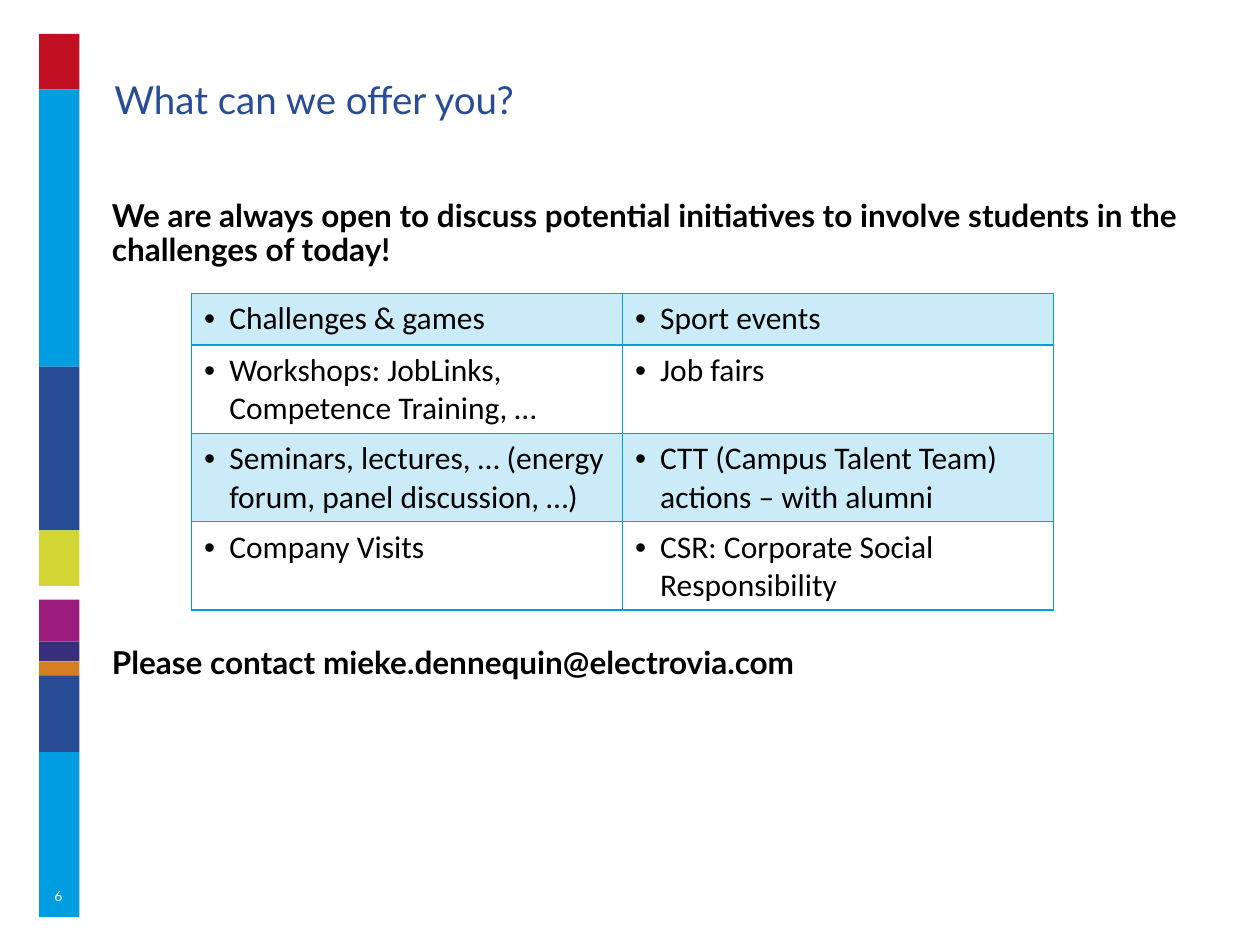
from lxml import etree
from pptx import Presentation, util as u
from pptx.dml.color import RGBColor
from pptx.enum import shapes, text
from pptx.oxml import ns

UNIT = u.Inches(0.1)
COLUMNS, ROWS = 100, 75

COLORS = {
    "sky": "009DE0", "red": "C01022", "navy": "284C96", "lime": "D2D534",
    "magenta": "9C1C7E", "violet": "382E7C", "orange": "D57E21",
    "black": "000000", "white": "FFFFFF",
}

STRIPE_LEFT, STRIPE_TOP, STRIPE_WIDTH = 3.1, 2.7, 3.2
STRIPE = [
    ("red", 4.4), ("sky", 22), ("navy", 13), ("lime", 4.4), (None, 1.1),
    ("magenta", 3.3), ("violet", 1.6), ("orange", 1.1), ("navy", 6.1), ("sky", 13.1),
]

HEADING = {"size": u.Pt(22), "name": "Lato", "bold": False, "color": "navy"}
STATEMENT = {"size": u.Pt(18), "name": "Lato", "bold": True, "color": "black"}
NUMBER = {"size": u.Pt(8), "name": "Lato", "bold": False, "color": "white"}
OFFER = {"size": u.Pt(18), "name": "Calibri", "bold": False, "color": "black"}

LEFT = {"alignment": text.PP_ALIGN.LEFT, "line_spacing": 0.9}
CENTER = {"alignment": text.PP_ALIGN.CENTER}
TOP, MIDDLE = text.MSO_ANCHOR.TOP, text.MSO_ANCHOR.MIDDLE

TEXTS = [
    ("What can we offer you?", (8.1, 6, 89.3, 8.7), HEADING, LEFT, TOP),
    ("We are always open to discuss potential initiatives to involve students "
     "in the challenges of today!", (7.9, 15.4, 89.3, 7), STATEMENT, LEFT, TOP),
    ("Please contact mieke.dennequin@electrovia.com",
     (7.9, 50.9, 89.3, 4), STATEMENT, LEFT, TOP),
    ("6", (2, 69.1, 5.3, 4), NUMBER, CENTER, MIDDLE),
]

OFFERS = [
    ("Challenges & games", "Sport events"),
    ("Workshops: JobLinks, Competence Training, …", "Job fairs"),
    ("Seminars, lectures, … (energy forum, panel discussion, …)",
     "CTT (Campus Talent Team) actions – with alumni"),
    ("Company Visits", "CSR: Corporate Social Responsibility"),
]
OFFER_LEFT, OFFER_TOP, OFFER_COLUMN = 15.2, 23.3, 34.2
OFFER_ROWS = [4.1, 7, 7, 7]
BORDER = u.Pt(1)
INDENT = u.Inches(0.2)
TINT = 20


def grid(*lengths):
    return [round(length * UNIT) for length in lengths]


def rgb(color):
    return RGBColor.from_string(COLORS[color])


def style(paragraph, font_format, paragraph_format):
    for key, value in paragraph_format.items():
        setattr(paragraph, key, value)
    for key, value in font_format.items():
        if key == "color":
            paragraph.font.color.rgb = rgb(value)
        else:
            setattr(paragraph.font, key, value)


def add_stripe(slide):
    top = STRIPE_TOP
    for color, height in STRIPE:
        if color:
            band = slide.shapes.add_shape(
                shapes.MSO_SHAPE.RECTANGLE, *grid(STRIPE_LEFT, top, STRIPE_WIDTH, height))
            band.shadow.inherit = False
            band.fill.solid()
            band.fill.fore_color.rgb = rgb(color)
            band.line.fill.background()
        top += height


def add_text(slide, words, place, font_format, paragraph_format, anchor):
    frame = slide.shapes.add_textbox(*grid(*place)).text_frame
    frame.word_wrap = True
    frame.vertical_anchor = anchor
    paragraph = frame.paragraphs[0]
    paragraph.text = words
    style(paragraph, font_format, paragraph_format)


def add_bullet(paragraph):
    properties = paragraph._p.get_or_add_pPr()
    properties.set("marL", str(INDENT))
    properties.set("indent", str(-INDENT))
    for tag, key, value in (("a:buFont", "typeface", "Arial"), ("a:buChar", "char", "•")):
        etree.SubElement(properties, ns.qn(tag)).set(key, value)


def add_borders(cell):
    properties = cell._tc.get_or_add_tcPr()
    for index, side in enumerate("LRTB"):
        line = etree.Element(ns.qn(f"a:ln{side}"), w=str(BORDER))
        fill = etree.SubElement(line, ns.qn("a:solidFill"))
        etree.SubElement(fill, ns.qn("a:srgbClr"), val=COLORS["sky"])
        properties.insert(index, line)


def fill_cell(cell, tinted):
    if not tinted:
        cell.fill.background()
        return
    cell.fill.solid()
    cell.fill.fore_color.rgb = rgb("sky")
    color = cell._tc.tcPr.find(".//" + ns.qn("a:srgbClr"))
    etree.SubElement(color, ns.qn("a:alpha"), val=str(TINT * 1000))


def add_offers(slide):
    count = len(OFFERS[0])
    place = grid(OFFER_LEFT, OFFER_TOP, count * OFFER_COLUMN, sum(OFFER_ROWS))
    table = slide.shapes.add_table(len(OFFERS), count, *place).table
    table.first_row = table.horz_banding = False
    for column in table.columns:
        column.width = round(OFFER_COLUMN * UNIT)
    for row, (offers, height) in enumerate(zip(OFFERS, OFFER_ROWS)):
        table.rows[row].height = round(height * UNIT)
        for column, offer in enumerate(offers):
            cell = table.cell(row, column)
            cell.text = offer
            paragraph = cell.text_frame.paragraphs[0]
            add_bullet(paragraph)
            style(paragraph, OFFER, {})
            fill_cell(cell, row % 2 == 0)
            add_borders(cell)


def main():
    deck = Presentation()
    deck.slide_width, deck.slide_height = grid(COLUMNS, ROWS)
    slide = deck.slides.add_slide(deck.slide_layouts[6])
    add_stripe(slide)
    for entry in TEXTS:
        add_text(slide, *entry)
    add_offers(slide)
    deck.save("out.pptx")


if __name__ == "__main__":
    main()
